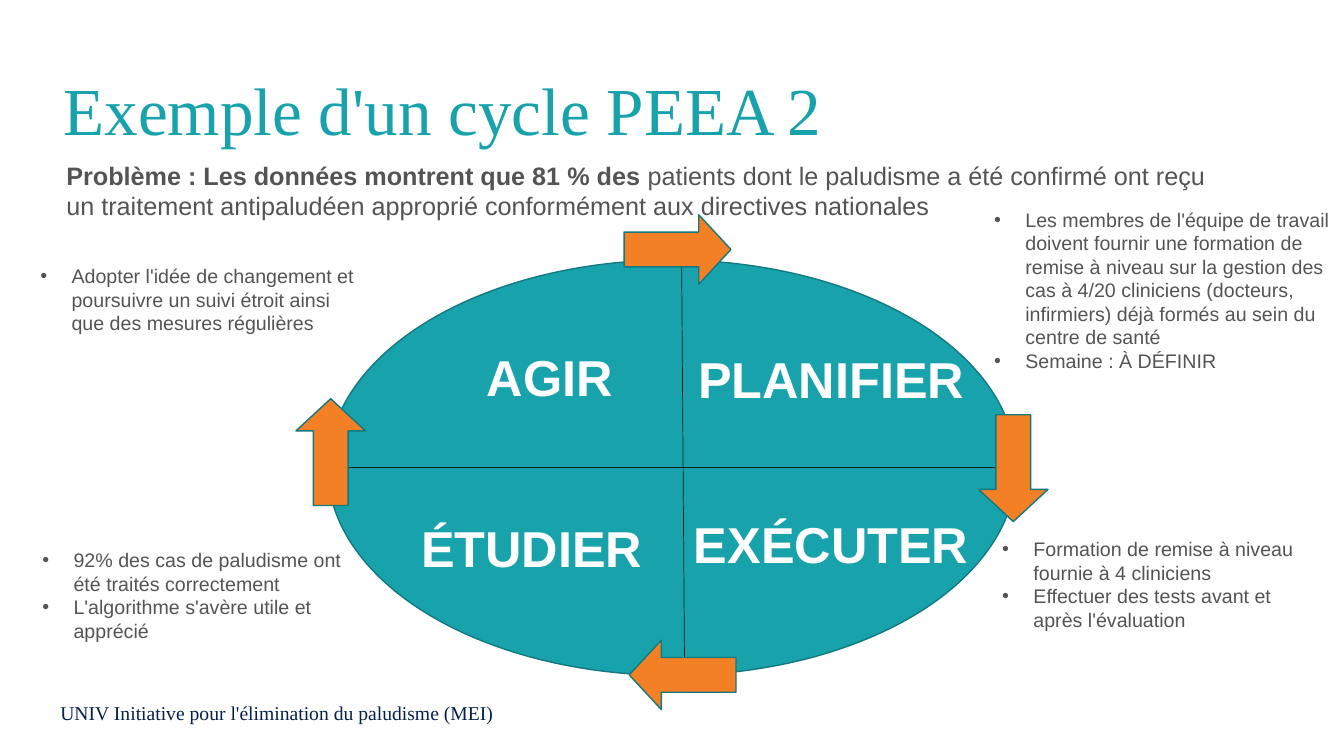
from lxml import etree
from pptx import Presentation
from pptx.dml.color import RGBColor
from pptx.enum.shapes import MSO_CONNECTOR, MSO_SHAPE
from pptx.enum.text import MSO_ANCHOR, PP_ALIGN
from pptx.oxml.ns import qn
from pptx.util import Inches, Pt

ELLIPSE, ARROW = MSO_SHAPE.OVAL, MSO_SHAPE.RIGHT_ARROW
STRAIGHT = MSO_CONNECTOR.STRAIGHT
LEFT, CENTER = PP_ALIGN.LEFT, PP_ALIGN.CENTER
TOP, MIDDLE = MSO_ANCHOR.TOP, MSO_ANCHOR.MIDDLE

TEAL = RGBColor(0x18, 0xA3, 0xAC)
DARK_TEAL = RGBColor(0x12, 0x79, 0x7F)
ORANGE = RGBColor(0xF3, 0x80, 0x24)
GREY = RGBColor(0x54, 0x54, 0x54)
BLACK = RGBColor(0x1B, 0x1B, 0x1B)
NAVY = RGBColor(0x05, 0x20, 0x49)
WHITE = RGBColor(0xFF, 0xFF, 0xFF)
SANS, SERIF = "Arial", "Times New Roman"

# Quadrant labels: text, left and top relative to the ellipse
LABELS = [
    ("AGIR", 0.37, 0.8),
    ("PLANIFIER", 3.16, 0.82),
    ("EXÉCUTER", 3.16, 2.46),
    ("ÉTUDIER", 0.19, 2.5),
]
# Cycle arrows: left and top relative to the ellipse, rotation
ARROWS = [
    (2.99, 3.77, 180),
    (6.27, 1.72, 90),
    (-0.5, 1.56, 270),
    (2.94, -0.45, 0),
]
# Notes around the ellipse: box, bullet items
NOTES = [
    ((0.38, 2.61, 3.23, 0.72), [
        "Adopter l'idée de changement et poursuivre un suivi étroit ainsi "
        "que des mesures régulières"]),
    ((0.4, 5.43, 3.2, 0.96), [
        "92% des cas de paludisme ont été traités correctement",
        "L'algorithme s'avère utile et apprécié"]),
    ((9.92, 5.32, 3.16, 0.96), [
        "Formation de remise à niveau fournie à 4 cliniciens",
        "Effectuer des tests avant et après l'évaluation"]),
    ((9.84, 2.05, 3.36, 1.66), [
        "Les membres de l'équipe de travail doivent fournir une formation de "
        "remise à niveau sur la gestion des cas à 4/20 cliniciens (docteurs, "
        "infirmiers) déjà formés au sein du centre de santé",
        "Semaine : À DÉFINIR"]),
]


def style(span, size, color, font=SANS, bold=False):
    span.font.size = Pt(size)
    span.font.color.rgb = color
    span.font.name = font
    span.font.bold = bold


def add_text(page, box, text, size, color, font=SANS, bold=False, align=LEFT):
    text_box = page.shapes.add_textbox(*map(Inches, box))
    frame = text_box.text_frame
    frame.word_wrap = True
    frame.vertical_anchor = TOP
    frame.text = text
    for para in frame.paragraphs:
        para.alignment = align
        for span in para.runs:
            style(span, size, color, font, bold)
    return frame


def add_solid(page, preset, box, fill):
    shape = page.shapes.add_shape(preset, *map(Inches, box))
    shape.shadow.inherit = False
    shape.fill.solid()
    shape.fill.fore_color.rgb = fill
    shape.line.color.rgb = DARK_TEAL
    shape.line.width = Pt(1)
    return shape


def add_divider(page, x1, y1, x2, y2):
    line = page.shapes.add_connector(STRAIGHT, *map(Inches, (x1, y1, x2, y2)))
    line.line.color.rgb = BLACK
    line.line.width = Pt(0.5)
    etree.SubElement(line._element.spPr, qn("a:effectLst"))


def add_title(page, box, text):
    title = page.shapes.title
    title.left, title.top, title.width, title.height = map(Inches, box)
    frame = title.text_frame
    frame.word_wrap = True
    frame.vertical_anchor = MIDDLE
    frame.text = text
    para = frame.paragraphs[0]
    para.alignment = LEFT
    para.line_spacing = 0.9
    style(para.runs[0], 48, TEAL, SERIF)


def add_problem(page, box, lead, rest):
    para = add_text(page, box, lead, 18, GREY, bold=True).paragraphs[0]
    para.space_before = Pt(1)
    span = para.add_run()
    span.text = rest
    style(span, 18, GREY)


def add_cycle(page, box):
    left, top, width, height = box
    add_solid(page, ELLIPSE, box, TEAL)
    # Dividers between the four quadrants
    middle = top + height / 2
    add_divider(page, left + 3.51, top - 0.1, left + 3.54, top + 4.11)
    add_divider(page, left, middle, left + width, middle)
    # Arrows around the rim
    for x, y, turn in ARROWS:
        arrow = add_solid(page, ARROW, (left + x, top + y, 1.06, 0.69), ORANGE)
        arrow.adjustments[0] = 0.5
        arrow.adjustments[1] = 0.463
        arrow.rotation = turn
    # Names of the phases
    for text, x, y in LABELS:
        add_text(page, (left + x, top + y, 3.67, 0.71), text, 36, WHITE,
                 bold=True, align=CENTER)


def add_notes(page, box, items):
    frame = add_text(page, box, "\n".join(items), 14, GREY)
    frame.margin_left = frame.margin_right = frame.margin_bottom = 0
    frame.margin_top = Inches(0.01)
    frame.paragraphs[0].space_before = Pt(1)
    for para in frame.paragraphs:
        settings = para._p.get_or_add_pPr()
        settings.set("marL", str(Inches(0.33)))
        settings.set("indent", str(Inches(-0.31)))
        etree.SubElement(settings, qn("a:buFont"), typeface=SANS)
        etree.SubElement(settings, qn("a:buChar"), char="•")


def main():
    deck = Presentation()
    deck.slide_width, deck.slide_height = Inches(13.33), Inches(7.5)
    page = deck.slides.add_slide(deck.slide_layouts[5])

    add_text(page, (0.5, 6.9, 5.31, 0.34),
             "UNIV Initiative pour l'élimination du paludisme (MEI)",
             14, NAVY, SERIF)
    add_problem(page, (0.56, 1.54, 11.74, 1.01),
                "Problème : Les données montrent que 81 % des ",
                "patients dont le paludisme a été confirmé ont reçu un "
                "traitement antipaludéen approprié conformément aux "
                "directives nationales")
    add_title(page, (0.53, 0.4, 12.45, 1.45), "Exemple d'un cycle PEEA 2")
    add_cycle(page, (3.25, 2.58, 6.83, 4.12))
    for box, items in NOTES:
        add_notes(page, box, items)

    deck.save("out.pptx")


if __name__ == "__main__":
    main()
